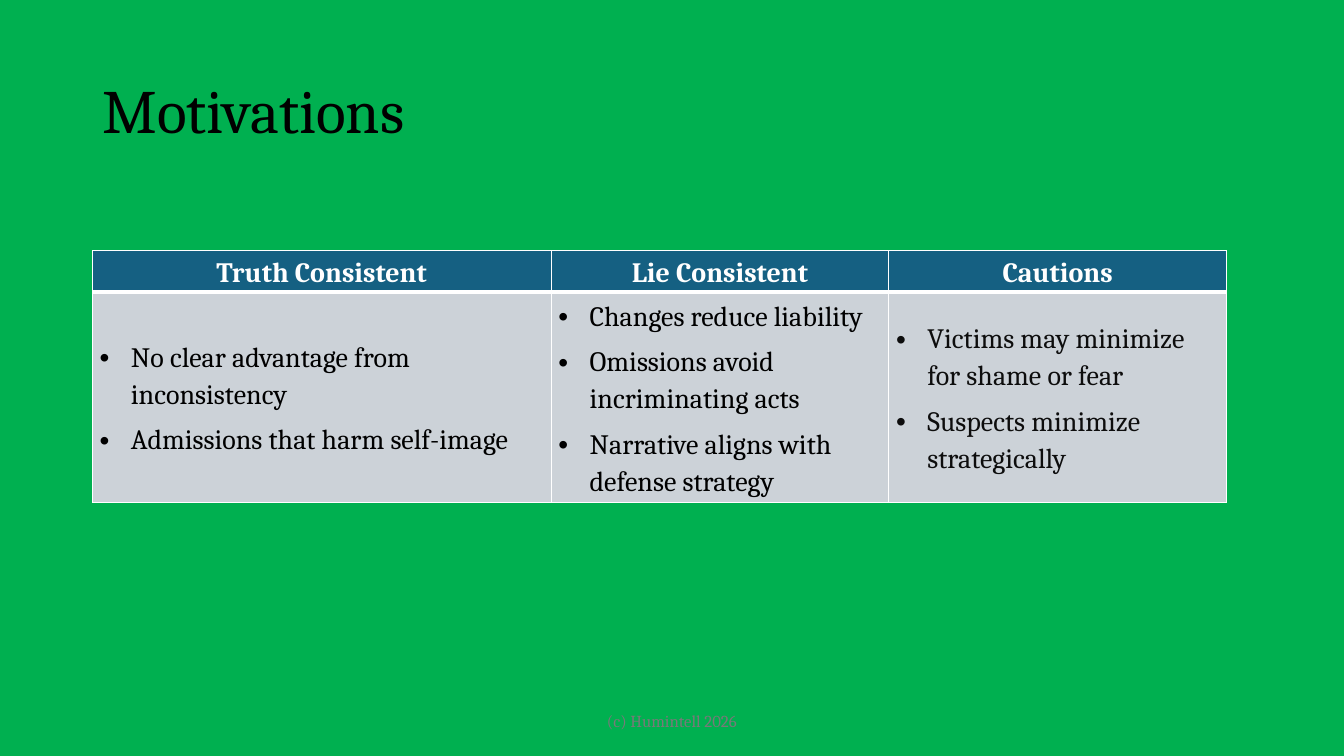
from dataclasses import dataclass

from lxml import etree
from pptx import Presentation, util as u
from pptx.dml.color import RGBColor
from pptx.enum import text
from pptx.oxml import ns


@dataclass(frozen=True)
class Theme:
    font: str = "Cambria"
    background: str = "00B050"
    header_fill: str = "156082"
    body_fill: str = "CCD2D8"
    border: str = "FFFFFF"
    header_text: str = "FFFFFF"
    black: str = "000000"
    soft_black: str = "0D0D0D"
    footer_text: str = "797979"
    title_size: int = 44
    table_size: int = 20
    footer_size: int = 12
    thin: int = 1
    thick: int = 3


THEME = Theme()
BULLET_INDENT = u.Cm(0.79)
COLUMNS = [
    ("Truth Consistent", 11.56, THEME.black,
     ["No clear advantage from inconsistency",
      "Admissions that harm self-image"]),
    ("Lie Consistent", 8.51, THEME.black,
     ["Changes reduce liability",
      "Omissions avoid incriminating acts",
      "Narrative aligns with defense strategy"]),
    ("Cautions", 8.51, THEME.soft_black,
     ["Victims may minimize for shame or fear",
      "Suspects minimize strategically"]),
]


def add_run(paragraph, wording, size, color, bold=False):
    run = paragraph.add_run()
    run.text = wording
    run.font.name = THEME.font
    run.font.size = u.Pt(size)
    run.font.bold = bold
    run.font.color.rgb = RGBColor.from_string(color)


def add_label(slide, wording, left, top, width, height, size, color, align, spacing=1.0):
    frame = slide.shapes.add_textbox(u.Cm(left), u.Cm(top), u.Cm(width), u.Cm(height)).text_frame
    frame.word_wrap = True
    frame.vertical_anchor = text.MSO_ANCHOR.MIDDLE
    line = frame.paragraphs[0]
    line.alignment = align
    line.line_spacing = spacing
    add_run(line, wording, size, color)


def add_bullet(paragraph):
    props = paragraph._p.get_or_add_pPr()
    props.set("marL", str(BULLET_INDENT))
    props.set("indent", str(-BULLET_INDENT))
    etree.SubElement(props, ns.qn("a:buFont"), typeface="Arial")
    etree.SubElement(props, ns.qn("a:buChar"), char="•")


def set_borders(cell, **widths):
    props = cell._tc.get_or_add_tcPr()
    for side in ("L", "R", "T", "B"):
        width = u.Pt(widths.get(side, THEME.thin))
        edge = etree.SubElement(props, ns.qn(f"a:ln{side}"), w=str(width))
        paint = etree.SubElement(edge, ns.qn("a:solidFill"))
        etree.SubElement(paint, ns.qn("a:srgbClr"), val=THEME.border)


def fill_cell(cell, lines, fill, color, header=False):
    set_borders(cell, **{"B" if header else "T": THEME.thick})
    cell.fill.solid()
    cell.fill.fore_color.rgb = RGBColor.from_string(fill)
    cell.margin_left = cell.margin_right = u.Cm(0.18)
    cell.margin_top = cell.margin_bottom = 0
    cell.vertical_anchor = text.MSO_ANCHOR.MIDDLE
    frame = cell.text_frame
    for index, wording in enumerate(lines):
        paragraph = frame.add_paragraph() if index else frame.paragraphs[0]
        if header:
            paragraph.alignment = text.PP_ALIGN.CENTER
        else:
            add_bullet(paragraph)
        paragraph.line_spacing = 1.15
        paragraph.space_after = u.Pt(6)
        add_run(paragraph, wording, THEME.table_size, color, bold=header)


def add_motivations(slide):
    row_heights = (1.04, 5.09)
    width = sum(column[1] for column in COLUMNS)
    table = slide.shapes.add_table(
        2, len(COLUMNS), u.Cm(2.33), u.Cm(6.32), u.Cm(width), u.Cm(sum(row_heights))).table
    for row, height in zip(table.rows, row_heights):
        row.height = u.Cm(height)
    for index, (heading, column_width, color, points) in enumerate(COLUMNS):
        table.columns[index].width = u.Cm(column_width)
        fill_cell(table.cell(0, index), [heading], THEME.header_fill, THEME.header_text, header=True)
        fill_cell(table.cell(1, index), points, THEME.body_fill, color)


def main():
    deck = Presentation()
    deck.slide_width, deck.slide_height = u.Cm(33.87), u.Cm(19.05)
    slide = deck.slides.add_slide(deck.slide_layouts[6])
    slide.background.fill.solid()
    slide.background.fill.fore_color.rgb = RGBColor.from_string(THEME.background)
    add_label(slide, "Motivations", 2.33, 1.02, 29.21, 3.68,
              THEME.title_size, THEME.black, text.PP_ALIGN.LEFT, 0.9)
    add_motivations(slide)
    add_label(slide, "(c) Humintell 2026", 11.22, 17.65, 11.43, 1.02,
              THEME.footer_size, THEME.footer_text, text.PP_ALIGN.CENTER)
    deck.save("out.pptx")


if __name__ == "__main__":
    main()
